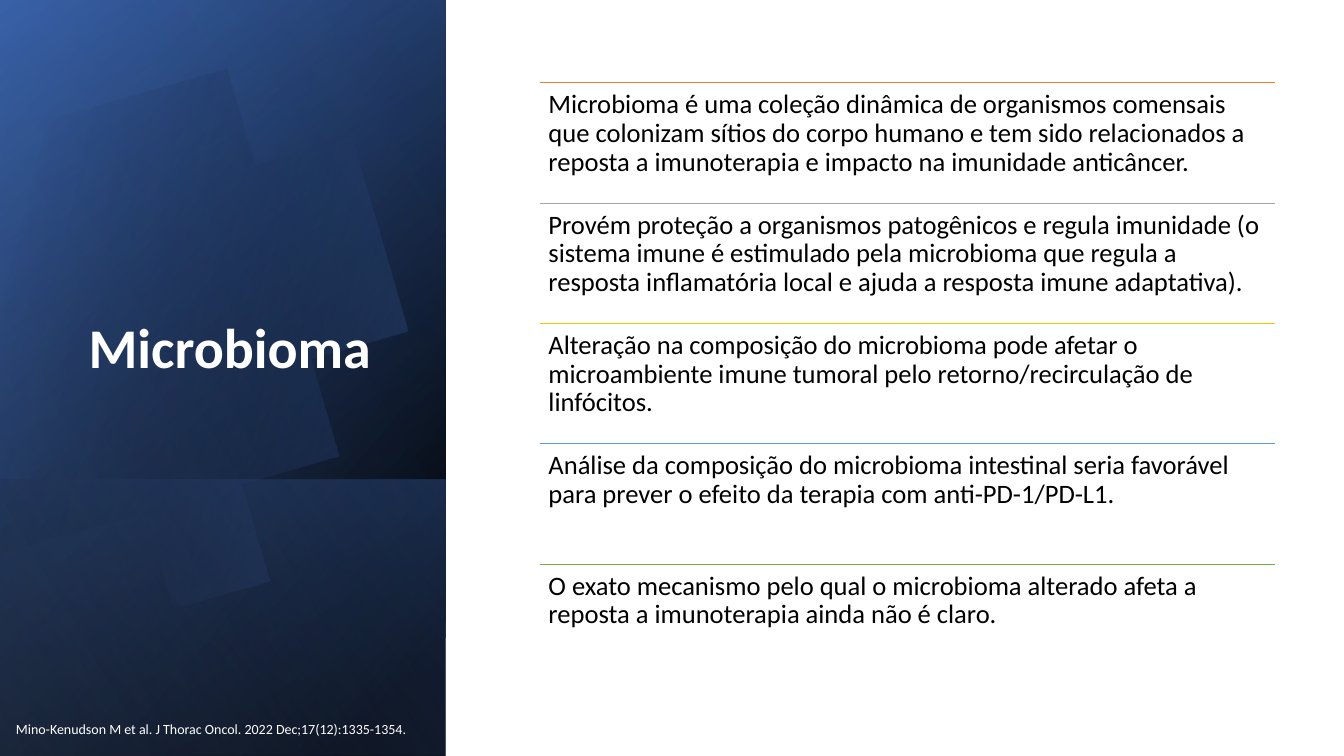
from math import acos, cos, radians, sin

from lxml.etree import SubElement
from pptx import Presentation
from pptx.dml.color import RGBColor
from pptx.enum.shapes import MSO_CONNECTOR as Connector, MSO_SHAPE as Shape
from pptx.oxml import parse_xml
from pptx.oxml.ns import nsdecls, qn
from pptx.util import Inches, Pt

FONT = "Calibri"
PANEL_WIDTH = 4.42
POINTS = [
    ("ED7D31", "Microbioma é uma coleção dinâmica de organismos comensais que colonizam sítios do corpo "
     "humano e tem sido relacionados a reposta a imunoterapia e impacto na imunidade anticâncer."),
    ("A5A5A5", "Provém proteção a organismos patogênicos e regula imunidade (o sistema imune é estimulado "
     "pela microbioma que regula a resposta inflamatória local e ajuda a resposta imune adaptativa)."),
    ("FFC000", "Alteração na composição do microbioma pode afetar o microambiente imune tumoral pelo "
     "retorno/recirculação de linfócitos."),
    ("5B9BD5", "Análise da composição do microbioma intestinal seria favorável para prever o efeito da "
     "terapia com anti-PD-1/PD-L1."),
    ("70AD47", "O exato mecanismo pelo qual o microbioma alterado afeta a reposta a imunoterapia ainda "
     "não é claro."),
]


def color(value):
    return RGBColor.from_string(value)


def paint_gradient(shape, stops, angle):
    """Fill with (position %, colour, opacity %) stops and remove the outline."""
    shape.shadow.inherit = False
    shape.line.fill.background()
    stop_xml = "".join(
        f'<a:gs pos="{position * 1000}"><a:srgbClr val="{value}">'
        f'<a:alpha val="{opacity * 1000}"/></a:srgbClr></a:gs>'
        for position, value, opacity in stops)
    gradient = parse_xml(
        f'<a:gradFill {nsdecls("a")} rotWithShape="1"><a:gsLst>{stop_xml}</a:gsLst>'
        f'<a:lin ang="{angle * 60000}" scaled="0"/></a:gradFill>')
    shape.fill.background()
    properties = shape.element.spPr
    properties.replace(properties.find(qn("a:noFill")), gradient)


def add_turned_layer(page, left, top, width, height, stops, angle):
    """Cover the given area with a mirrored rectangle turned by 90 degrees."""
    shift = (width - height) / 2
    layer = page.shapes.add_shape(Shape.RECTANGLE, Inches(left + shift), Inches(top - shift),
                                  Inches(height), Inches(width))
    layer.rotation = 90
    layer.element.spPr.xfrm.set("flipH", "1")
    paint_gradient(layer, stops, angle)


def add_cut_circle(page, center_x, center_y, radius, cut, tilt, stops, angle):
    """Draw a circle cut by a chord on its left, tilted counterclockwise."""
    half = radians(180) - acos(cut / radius)
    steps = 120
    turns = [radians(tilt) - half + 2 * half * step / steps for step in range(steps + 1)]
    outline = [(center_x + radius * cos(turn), center_y + radius * sin(turn)) for turn in turns]
    builder = page.shapes.build_freeform(*outline[0], scale=Inches(1))
    builder.add_line_segments(outline[1:], close=True)
    circle = builder.convert_to_shape()
    circle.rotation = 360 - tilt
    paint_gradient(circle, stops, angle)


def add_text(page, text, left, top, width, height, *, size, value="000000", bold=False,
             inset=None, spacing=None, after=6):
    box = page.shapes.add_textbox(Inches(left), Inches(top), Inches(width), Inches(height))
    frame = box.text_frame
    frame.word_wrap = True
    if inset is not None:
        frame.margin_left = frame.margin_right = Inches(inset)
        frame.margin_top = frame.margin_bottom = Inches(inset)
    para = frame.paragraphs[0]
    para.space_after = Pt(after)
    if spacing:
        para.line_spacing = spacing
    span = para.add_run()
    span.text = text
    span.font.name = FONT
    span.font.size = Pt(size)
    span.font.bold = bold
    span.font.color.rgb = color(value)


def add_rule(page, left, top, width, value):
    rule = page.shapes.add_connector(Connector.STRAIGHT, Inches(left), Inches(top),
                                     Inches(left + width), Inches(top))
    rule.line.color.rgb = color(value)
    rule.line.width = Pt(0.5)
    SubElement(rule.element.spPr, qn("a:effectLst"))


def add_title_panel(page, left, top, width, height):
    whole = (left, top, width, height)
    foot = 2.74
    # Layered gradients
    add_turned_layer(page, *whole, [(8, "000000", 100), (100, "2F5597", 100)], 50)
    add_turned_layer(page, *whole, [(0, "000000", 0), (99, "4472C4", 46)], 30)
    add_turned_layer(page, left, top + height - foot, width, foot,
                     [(2, "4472C4", 29), (100, "000000", 30)], 130)
    add_cut_circle(page, left + 1.43, top + 3.35, 2.29, 1.58, 16.1,
                   [(29, "000000", 0), (100, "4472C4", 43)], 30)
    add_turned_layer(page, *whole, [(0, "000000", 0), (99, "8FAADC", 11)], 120)
    # Citation and title
    add_text(page, "Mino-Kenudson M et al. J Thorac Oncol. 2022 Dec;17(12):1335-1354.",
             left + 0.06, top + 7.1, 4.21, 0.27, size=10, value="FFFFFF")
    add_text(page, "Microbioma", left + 0.78, top + 3.05, 3.1, 0.77,
             size=40, value="FFFFFF", bold=True)


def add_point_list(page, left, top, width, height):
    row_height = height / len(POINTS)
    for index, (value, text) in enumerate(POINTS):
        row_top = top + index * row_height
        add_rule(page, left, row_top, width, value)
        add_text(page, text, left, row_top, width, row_height,
                 size=19, inset=0.08, spacing=0.9, after=6.65)


def main():
    deck = Presentation()
    deck.slide_width, deck.slide_height = Inches(13.33), Inches(7.5)
    page = deck.slides.add_slide(deck.slide_layouts[6])
    add_title_panel(page, 0, 0, PANEL_WIDTH, 7.5)
    add_point_list(page, 5.36, 0.82, 7.29, 5.97)
    deck.save("out.pptx")


if __name__ == "__main__":
    main()
